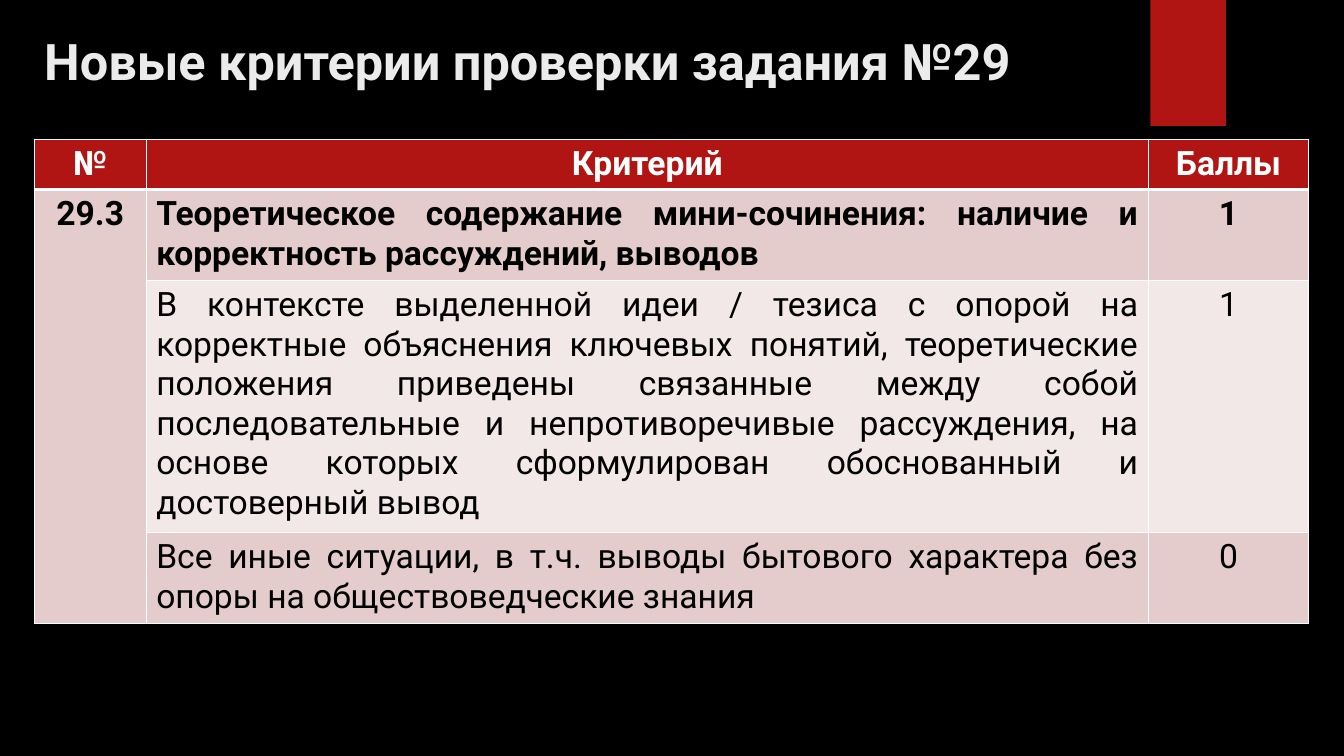
from lxml.etree import SubElement
from pptx import Presentation
from pptx.dml.color import RGBColor as Rgb
from pptx.enum.shapes import MSO_SHAPE as Shape
from pptx.enum.text import MSO_ANCHOR as Anchor, PP_ALIGN as Align
from pptx.oxml.ns import qn
from pptx.util import Inches, Pt

WIDTH, HEIGHT = Inches(13.33), Inches(7.5)
COLORS = {
    "background": "000000",
    "accent": "B01513",
    "title": "EBEBEB",
    "header": "FFFFFF",
    "body": "000000",
    "border": "FFFFFF",
    "dark_band": "E4CCCC",
    "light_band": "F2E8E7",
}
COLUMNS = [1.11, 9.94, 1.59]
ROWS = [0.49, 0.88, 2.45, 0.88]
ALIGNMENTS = [Align.CENTER, Align.JUSTIFY, Align.CENTER]
CRITERIA = [
    ["№", "Критерий", "Баллы"],
    ["29.3", "Теоретическое содержание мини-сочинения: наличие и корректность "
     "рассуждений, выводов", "1"],
    ["", "В контексте выделенной идеи / тезиса с опорой на корректные объяснения "
     "ключевых понятий, теоретические положения приведены связанные между собой "
     "последовательные и непротиворечивые рассуждения, на основе которых "
     "сформулирован обоснованный и достоверный вывод", "1"],
    ["", "Все иные ситуации, в т.ч. выводы бытового характера без опоры на "
     "обществоведческие знания", "0"],
]


def color(name):
    return Rgb.from_string(COLORS[name])


def paint(fill, name):
    fill.solid()
    fill.fore_color.rgb = color(name)


def write(frame, text, color_name, size, bold, align):
    para = frame.paragraphs[0]
    para.alignment = align
    span = para.add_run()
    span.text = text
    for key, value in {"name": "Roboto", "size": Pt(size), "bold": bold}.items():
        setattr(span.font, key, value)
    span.font.color.rgb = color(color_name)


def add_title(page, text):
    box = page.shapes.add_textbox(
        Inches(0.34), Inches(0.22), Inches(11.05), Inches(0.75))
    box.text_frame.word_wrap = True
    box.text_frame.vertical_anchor = Anchor.MIDDLE
    write(box.text_frame, text, "title", 36, True, Align.LEFT)


def add_ribbon(page):
    ribbon = page.shapes.add_shape(
        Shape.RECTANGLE, Inches(11.41), 0, Inches(0.75), HEIGHT // 6)
    ribbon.shadow.inherit = False
    paint(ribbon.fill, "accent")
    ribbon.line.fill.background()


def add_borders(cell, bottom_width):
    properties = cell._tc.get_or_add_tcPr()
    widths = {"lnL": 1, "lnR": 1, "lnT": 1, "lnB": bottom_width}
    for side, width in widths.items():
        line = SubElement(properties, qn(f"a:{side}"), w=str(Pt(width)))
        solid = SubElement(line, qn("a:solidFill"))
        SubElement(solid, qn("a:srgbClr"), val=COLORS["border"])


def add_criteria(page):
    frame = page.shapes.add_table(
        len(ROWS), len(COLUMNS), Inches(0.34), Inches(1.38),
        Inches(sum(COLUMNS)), Inches(sum(ROWS)))
    table = frame.table
    for column, width in zip(table.columns, COLUMNS):
        column.width = Inches(width)
    for row, height in zip(table.rows, ROWS):
        row.height = Inches(height)
    for row, texts in enumerate(CRITERIA):
        header = row == 0
        for column, text in enumerate(texts):
            cell = table.cell(row, column)
            add_borders(cell, 3 if header else 1)
            light = row == 2 and column > 0
            band = "light_band" if light else "dark_band"
            paint(cell.fill, "accent" if header else band)
            if text:
                write(cell.text_frame, text, "header" if header else "body",
                      24, row < 2, Align.CENTER if header else ALIGNMENTS[column])
    table.cell(1, 0).merge(table.cell(3, 0))


def main():
    deck = Presentation()
    deck.slide_width, deck.slide_height = WIDTH, HEIGHT
    page = deck.slides.add_slide(deck.slide_layouts[6])
    paint(page.background.fill, "background")
    add_ribbon(page)
    add_title(page, "Новые критерии проверки задания №29")
    add_criteria(page)
    deck.save("out.pptx")


if __name__ == "__main__":
    main()
